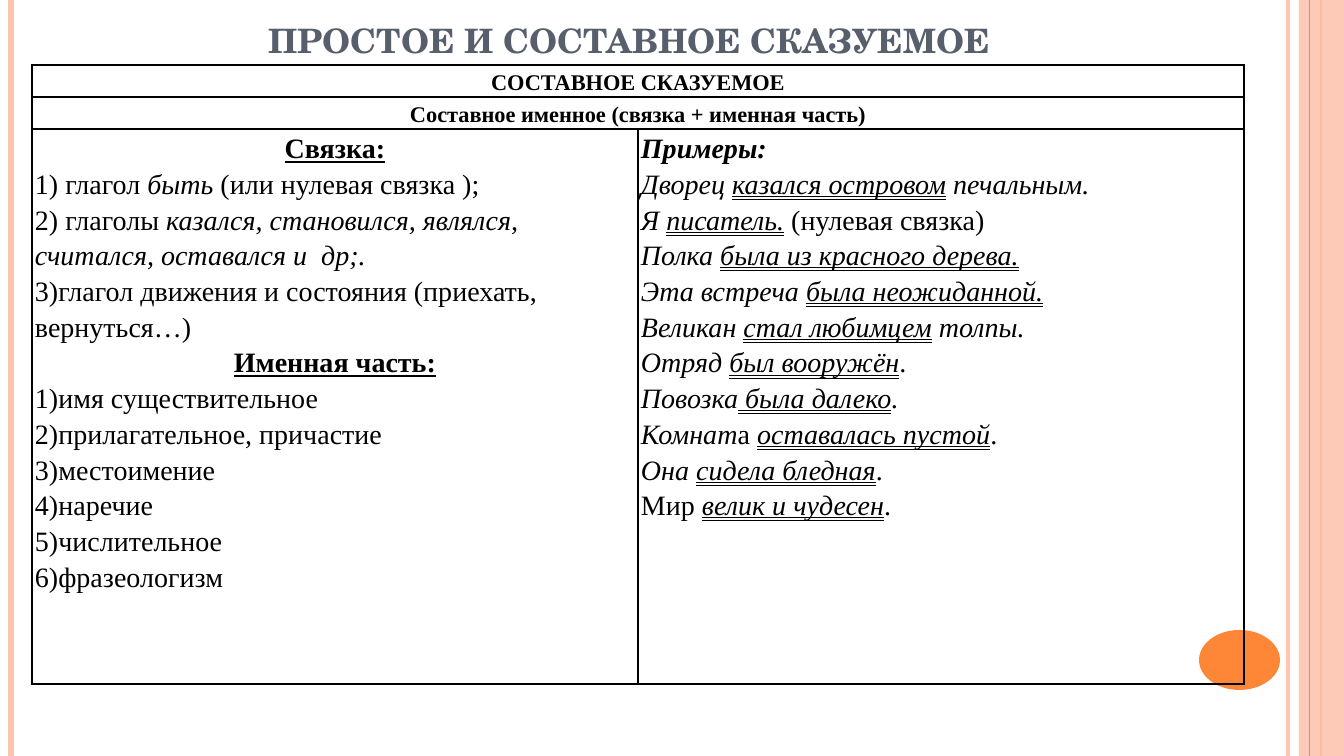
"""Build the slide on simple and compound predicates."""
from lxml.etree import SubElement
from pptx import Presentation
from pptx.dml.color import RGBColor
from pptx.enum.shapes import MSO_CONNECTOR, MSO_SHAPE
from pptx.enum.text import MSO_ANCHOR, MSO_UNDERLINE, PP_ALIGN
from pptx.oxml.ns import qn
from pptx.util import Pt

PX = 914400 / 100.8
WIDTH, HEIGHT = 1344, 756
COLORS = {"peach": "FEC3AE", "orange": "FE8637", "slate": "575F6D", "black": "000000"}
TITLE_FONT, BODY_FONT = "TeX Gyre Schola", "Times New Roman"

TITLE = "ПРОСТОЕ И СОСТАВНОЕ СКАЗУЕМОЕ"
TITLE_BOX = (80, 0, 1098, 65)

# Style letters: c centred, b bold, i italic, u underlined, d double underlined
HEADINGS = ["СОСТАВНОЕ СКАЗУЕМОЕ", "Составное именное (связка + именная часть)"]
PARTS = [
    [("Связка:", "cbu")],
    [("1) глагол ", ""), ("быть", "i"), (" (или нулевая связка );", "")],
    [("2) глаголы ", ""),
     ("казался, становился, являлся, считался, оставался и  др;.", "i")],
    [("3)глагол движения и состояния (приехать, вернуться…)", "")],
    [("Именная часть:", "cbu")],
    [("1)имя существительное", "")],
    [("2)прилагательное, причастие", "")],
    [("3)местоимение", "")],
    [("4)наречие", "")],
    [("5)числительное", "")],
    [("6)фразеологизм", "")],
]
EXAMPLES = [
    [("Примеры:", "bi")],
    [("Дворец ", "i"), ("казался островом", "id"), (" печальным.", "i")],
    [("Я ", "i"), ("писатель.", "id"), (" ", "i"), ("(нулевая связка)", "")],
    [("Полка ", "i"), ("была из красного дерева.", "id")],
    [("Эта встреча ", "i"), ("была неожиданной.", "id")],
    [("Великан ", "i"), ("стал любимцем", "id"), (" толпы.", "i")],
    [("Отряд ", "i"), ("был вооружён", "id"), (".", "")],
    [("Повозка", "i"), (" была далеко", "id"), (".", "i")],
    [("Комнат", "i"), ("а ", ""), ("оставалась пустой", "id"), (".", "")],
    [("Она ", "i"), ("сидела бледная", "id"), (".", "")],
    [("Мир ", ""), ("велик и чудесен", "id"), (".", "")],
]
TABLE_LEFT, TABLE_TOP = 32, 65
COLUMNS, ROWS = [606, 606], [32, 32, 555]

STRIPES = [(1288, "peach", 3, 93), (11, "peach", 4.5, 100), (1321, "orange", 1.5, 100)]
BAND = (1299, 0, 45, HEIGHT)
THIN_STRIPE = (1310, "orange", 0.75, 100)
DISC = (1199, 630, 81, 60)


def px(n):
    return round(n * PX)


def rgb(name):
    return RGBColor.from_string(COLORS[name])


def set_alpha(fill_parent, percent):
    if percent < 100:
        color = next(fill_parent.iter(qn("a:srgbClr")))
        SubElement(color, qn("a:alpha"), val=str(percent * 1000))


def add_stripe(slide, x, color, width, alpha):
    line = slide.shapes.add_connector(MSO_CONNECTOR.STRAIGHT, px(x), 0, px(x), px(HEIGHT))
    line.line.color.rgb = rgb(color)
    line.line.width = Pt(width)
    set_alpha(line.line._ln, alpha)
    SubElement(line._element.spPr, qn("a:effectLst"))


def add_filled(slide, kind, box, color, alpha=100):
    sp = slide.shapes.add_shape(kind, *map(px, box))
    sp.shadow.inherit = False
    sp.fill.solid()
    sp.fill.fore_color.rgb = rgb(color)
    sp.line.fill.background()
    set_alpha(sp._element.spPr, alpha)


def add_run(p, text, style, size, font=BODY_FONT, color="black"):
    r = p.add_run()
    r.text = text
    r.font.name, r.font.size = font, Pt(size)
    r.font.color.rgb = rgb(color)
    r.font.bold, r.font.italic = "b" in style, "i" in style
    if "d" in style:
        r.font.underline = MSO_UNDERLINE.DOUBLE_LINE
    else:
        r.font.underline = "u" in style


def fill_cell(cell, paragraphs, size):
    tf = cell.text_frame
    for i, runs in enumerate(paragraphs):
        p = tf.add_paragraph() if i else tf.paragraphs[0]
        p.line_spacing = 1.15
        p.alignment = PP_ALIGN.CENTER if "c" in runs[0][1] else PP_ALIGN.LEFT
        for text, style in runs:
            add_run(p, text, style, size)


def format_cell(cell):
    cell.margin_left = cell.margin_right = px(3)
    cell.margin_top = cell.margin_bottom = 0
    tc_pr = cell._tc.get_or_add_tcPr()
    for side in ("lnL", "lnR", "lnT", "lnB"):
        ln = SubElement(tc_pr, qn(f"a:{side}"), w=str(Pt(1)))
        solid = SubElement(ln, qn("a:solidFill"))
        SubElement(solid, qn("a:srgbClr"), val=COLORS["black"])
    cell.fill.background()


def add_title(slide):
    tf = slide.shapes.add_textbox(*map(px, TITLE_BOX)).text_frame
    tf.word_wrap = True
    tf.vertical_anchor = MSO_ANCHOR.BOTTOM
    p = tf.paragraphs[0]
    p.alignment = PP_ALIGN.CENTER
    add_run(p, TITLE, "b", 24, TITLE_FONT, "slate")


def add_predicate_table(slide):
    box = (TABLE_LEFT, TABLE_TOP, sum(COLUMNS), sum(ROWS))
    table = slide.shapes.add_table(len(ROWS), len(COLUMNS), *map(px, box)).table
    table.first_row = table.horz_banding = False
    for column, width in zip(table.columns, COLUMNS):
        column.width = px(width)
    for row, height in zip(table.rows, ROWS):
        row.height = px(height)
    for cell in table.iter_cells():
        format_cell(cell)
    for i, heading in enumerate(HEADINGS):
        cell = table.cell(i, 0)
        cell.merge(table.cell(i, 1))
        cell.vertical_anchor = MSO_ANCHOR.MIDDLE
        fill_cell(cell, [[(heading, "cb")]], 16)
    for j, paragraphs in enumerate((PARTS, EXAMPLES)):
        fill_cell(table.cell(len(HEADINGS), j), paragraphs, 20)


def main():
    prs = Presentation()
    prs.slide_width, prs.slide_height = px(WIDTH), px(HEIGHT)
    slide = prs.slides.add_slide(prs.slide_layouts[6])
    for stripe in STRIPES:
        add_stripe(slide, *stripe)
    add_filled(slide, MSO_SHAPE.RECTANGLE, BAND, "peach", 87)
    add_stripe(slide, *THIN_STRIPE)
    add_filled(slide, MSO_SHAPE.OVAL, DISC, "orange")
    add_title(slide)
    add_predicate_table(slide)
    prs.save("out.pptx")


if __name__ == "__main__":
    main()
